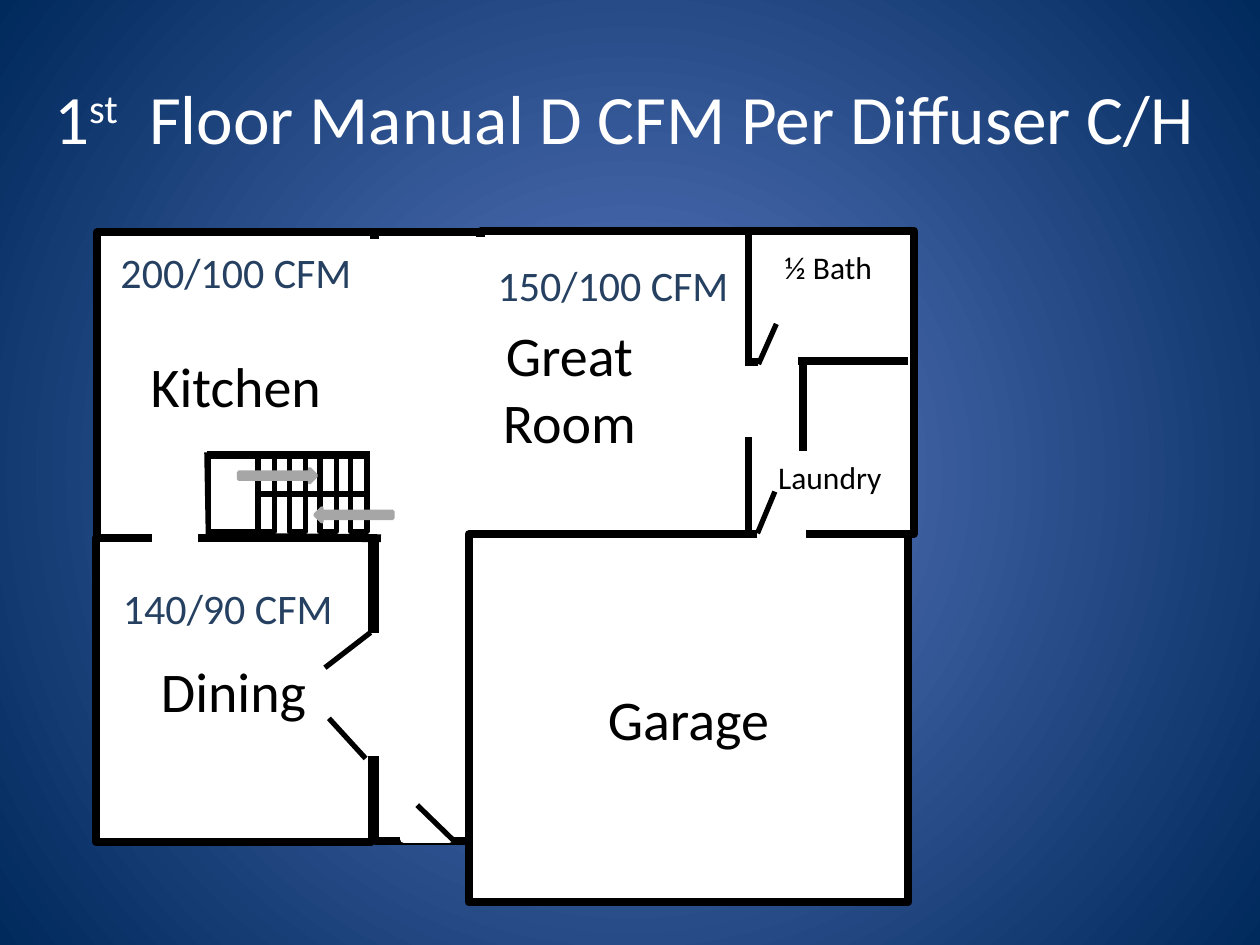
from dataclasses import dataclass

from lxml.etree import SubElement
from pptx import Presentation
from pptx.dml.color import RGBColor
from pptx.enum.shapes import MSO_CONNECTOR, MSO_SHAPE
from pptx.enum.text import MSO_ANCHOR, PP_ALIGN
from pptx.oxml.ns import qn
from pptx.util import Cm, Pt


@dataclass(frozen=True)
class Theme:
    """Colours, type sizes and line widths of the slide."""
    font: str = "Calibri"
    glow: str = "5E7CC5"
    navy: str = "00295C"
    white: str = "FFFFFF"
    black: str = "000000"
    airflow: str = "254061"
    arrow: str = "A6A6A6"
    title: float = 39.6
    room: float = 32
    reading: float = 24
    small: float = 18
    wall: float = 4.5
    thin: float = 3
    arrow_edge: float = 2


@dataclass(frozen=True)
class Box:
    """A region in centimetres that places parts relative to its corner."""
    left: float
    top: float
    width: float
    height: float

    def inner(self, left, top, width, height):
        """Return a box offset from this one."""
        return Box(self.left + left, self.top + top, width, height)

    def point(self, x, y):
        """Return slide lengths of a point inside this box."""
        return Cm(self.left + x), Cm(self.top + y)

    def lengths(self):
        """Return the box as slide lengths."""
        return Cm(self.left), Cm(self.top), Cm(self.width), Cm(self.height)


THEME = Theme()


def apply_format(target, formats):
    """Set each attribute of the target from a dict."""
    for attribute, value in formats.items():
        setattr(target, attribute, value)


def add_run(paragraph, wording, size, color):
    """Add a styled run of text."""
    run = paragraph.add_run()
    run.text = wording
    apply_format(run.font, {"name": THEME.font, "size": Pt(size)})
    run.font.color.rgb = RGBColor.from_string(color)
    return run


def add_block(slide, box, edge=THEME.black, width=THEME.wall, fill=THEME.white,
              kind=MSO_SHAPE.RECTANGLE, label="", size=THEME.room):
    """Draw a filled shape with an optional centred label."""
    block = slide.shapes.add_shape(kind, *box.lengths())
    block.shadow.inherit = False
    block.fill.solid()
    block.fill.fore_color.rgb = RGBColor.from_string(fill)
    block.line.color.rgb = RGBColor.from_string(edge)
    block.line.width = Pt(width)
    if label:
        apply_format(block.text_frame, {"word_wrap": True, "vertical_anchor": MSO_ANCHOR.MIDDLE})
        paragraph = block.text_frame.paragraphs[0]
        paragraph.alignment = PP_ALIGN.CENTER
        add_run(paragraph, label, size, THEME.black)
    return block


def add_wall(slide, box, start, end, width=THEME.wall):
    """Draw a straight black line between two points of the box."""
    wall = slide.shapes.add_connector(MSO_CONNECTOR.STRAIGHT, *box.point(*start), *box.point(*end))
    wall.line.color.rgb = RGBColor.from_string(THEME.black)
    wall.line.width = Pt(width)
    SubElement(wall._element.spPr, qn("a:effectLst"))
    return wall


def paint_background(slide):
    """Fill the background with a radial blue gradient."""
    fill = slide.background.fill
    fill.gradient()
    for stop, color in zip(fill.gradient_stops, (THEME.glow, THEME.navy)):
        stop.color.rgb = RGBColor.from_string(color)
    gradient = slide._element.find(".//" + qn("a:gradFill"))
    gradient.remove(gradient.find(qn("a:lin")))
    radial = SubElement(gradient, qn("a:path"), {"path": "circle"})
    SubElement(radial, qn("a:fillToRect"), {side: "50000" for side in "ltrb"})


def add_title(slide, box):
    """Write the slide title with its superscript ordinal."""
    frame = slide.shapes.add_textbox(*box.lengths()).text_frame
    apply_format(frame, {"word_wrap": True, "vertical_anchor": MSO_ANCHOR.MIDDLE})
    heading = frame.paragraphs[0]
    heading.alignment = PP_ALIGN.CENTER
    add_run(heading, "1", THEME.title, THEME.white)
    ordinal = add_run(heading, "st", THEME.title, THEME.white)
    ordinal._r.get_or_add_rPr().set("baseline", "30000")
    add_run(heading, "  Floor Manual D CFM Per Diffuser C/H", THEME.title, THEME.white)


def add_rooms(slide, plan):
    """Draw the rooms, with the great room open to the hall."""
    for place, label, edge in (
        ((0, 6.2, 5.56, 6.12), "Dining", THEME.black),
        ((0.03, 0.03, 5.59, 6.17), "Kitchen", THEME.black),
        ((5.64, 0.03, 2.11, 12.27), "", THEME.black),
        ((7.77, 0, 5.51, 6.15), "", THEME.black),
        ((13.16, 0, 3.33, 6.12), "", THEME.black),
        ((7.06, 0.2, 4.98, 5.94), "Great Room", THEME.white),
        ((7.52, 6.12, 8.86, 7.42), "Garage", THEME.black),
    ):
        add_block(slide, plan.inner(*place), edge, label=label)


def add_openings(slide, plan):
    """Clear the wall openings and write the two small room names."""
    for place, label in (
        ((5.44, 8.2, 1.47, 2.31), ""),
        ((4.7, 0.25, 1.47, 5.89), ""),
        ((6.22, 11.58, 0.91, 0.69), ""),
        ((13.31, 0.33, 2.92, 0.81), "½ Bath"),
        ((12.88, 2.79, 1.47, 1.3), ""),
        ((13.34, 4.55, 2.92, 0.81), "Laundry"),
        ((13.41, 5.79, 0.84, 0.66), ""),
        ((4.55, 5.08, 0.84, 0.66), ""),
        ((1.22, 5.54, 0.76, 0.94), ""),
    ):
        add_block(slide, plan.inner(*place), THEME.white, label=label, size=THEME.small)


def add_doors_and_partitions(slide, plan):
    """Draw the open doors and the walls round bath and laundry."""
    for hinge, tip in (
        ((7.21, 12.29), (6.48, 11.58)),
        ((13.36, 2.69), (13.72, 1.88)),
        ((5.54, 8.1), (4.62, 8.81)),
        ((5.44, 10.64), (4.7, 9.83)),
        ((13.34, 6.1), (13.69, 5.26)),
    ):
        add_wall(slide, plan, hinge, tip, THEME.thin)
    for start, end in (
        ((14.15, 2.62), (16.38, 2.62)),
        ((14.25, 4.45), (14.25, 2.69)),
        ((13.36, 2.64), (13.08, 2.64)),
    ):
        add_wall(slide, plan, start, end)


def add_stairs(slide, stairs):
    """Draw the landing, treads, rails and direction arrows."""
    landing = add_block(slide, stairs.inner(0.03, 0.08, 0.99, 1.52), width=THEME.thin)
    treads = [add_block(slide, stairs.inner(1.04 + 0.62 * step, 0.08, 0.33, 1.52), width=THEME.thin)
              for step in reversed(range(4))]
    rail = add_wall(slide, stairs, (1.02, 0.84), (3.23, 0.84), THEME.thin)
    rail.begin_connect(landing, 3)
    rail.end_connect(treads[0], 3)
    for start, end, width in (
        ((0, 0.05), (3.28, 0.05), THEME.wall),
        ((0.91, 0.08), (3.2, 0.08), THEME.thin),
        ((0.2, 1.7), (3.51, 1.73), THEME.wall),
        ((0.03, 1.68), (0, 0), THEME.thin),
    ):
        add_wall(slide, stairs, start, end, width)
    for left, top, turn in ((2.18, 1.12, 0), (0.64, 0.33, 180)):
        arrow = add_block(slide, stairs.inner(left, top, 1.57, 0.28), THEME.arrow,
                          THEME.arrow_edge, THEME.arrow, MSO_SHAPE.LEFT_ARROW)
        arrow.rotation = turn


def add_airflow_readings(slide, plan):
    """Write the cooling and heating airflow of each diffuser."""
    for place, reading in (
        ((0.25, 0.2, 5.21, 1.27), "200/100 CFM"),
        ((7.85, 0.46, 5.21, 1.27), "150/100 CFM"),
        ((0.3, 6.96, 4.78, 1.27), "140/90 CFM"),
    ):
        frame = slide.shapes.add_textbox(*plan.inner(*place).lengths()).text_frame
        frame.word_wrap = False
        add_run(frame.paragraphs[0], reading, THEME.reading, THEME.airflow)


def main():
    """Build and save the floor plan slide."""
    deck = Presentation()
    apply_format(deck, {"slide_width": Cm(25.4), "slide_height": Cm(19.05)})
    slide = deck.slides.add_slide(deck.slide_layouts[6])
    plan = Box(1.93, 4.65, 16.48, 13.54)
    paint_background(slide)
    add_title(slide, Box(0.2, 0.76, 24.77, 3.18))
    add_rooms(slide, plan)
    add_openings(slide, plan)
    add_doors_and_partitions(slide, plan)
    add_stairs(slide, plan.inner(2.24, 4.47, 3.51, 1.73))
    add_airflow_readings(slide, plan)
    deck.save("out.pptx")


if __name__ == "__main__":
    main()
